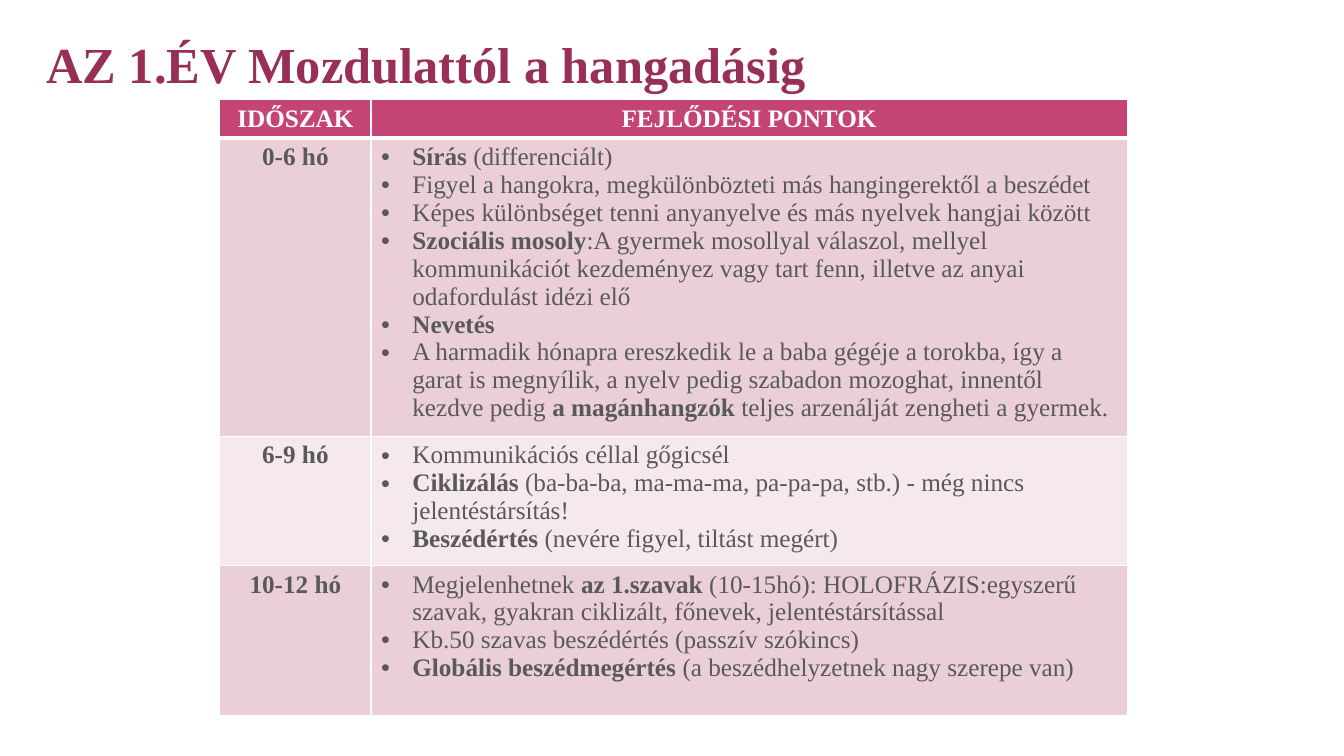
from dataclasses import dataclass

from lxml import etree
from pptx import Presentation
from pptx.dml.color import RGBColor
from pptx.enum.text import MSO_ANCHOR, MSO_AUTO_SIZE, PP_ALIGN
from pptx.oxml.ns import qn
from pptx.util import Pt

PX = 9144  # 100 px to the inch
FONT = "Times New Roman"
WINE = RGBColor(0x97, 0x2F, 0x57)
ROSE = RGBColor(0xC4, 0x44, 0x75)
PINK = RGBColor(0xEA, 0xCF, 0xD6)
PALE = RGBColor(0xF5, 0xE9, 0xEC)
GREY = RGBColor(0x59, 0x59, 0x59)
WHITE = RGBColor(0xFF, 0xFF, 0xFF)
LEFT, MID = PP_ALIGN.LEFT, PP_ALIGN.CENTER
BASE, FIXED = MSO_ANCHOR.BOTTOM, MSO_AUTO_SIZE.NONE
INDENT = 31
COLS = (150, 750)


@dataclass
class Row:
    """One table row; asterisks enclose bold words."""
    height: int
    fill: RGBColor
    span: str
    points: list[str]


ROWS = [
    Row(38, ROSE, "*IDŐSZAK*", ["*FEJLŐDÉSI PONTOK*"]),
    Row(296, PINK, "*0-6 hó*", [
        "*Sírás *(differenciált)",
        "Figyel a hangokra, megkülönbözteti más hangingerektől a beszédet",
        "Képes különbséget tenni anyanyelve és más nyelvek hangjai között",
        "*Szociális mosoly*:A gyermek mosollyal válaszol, mellyel "
        "kommunikációt kezdeményez vagy tart fenn, illetve az anyai "
        "odafordulást idézi elő",
        "*Nevetés*",
        "A harmadik hónapra ereszkedik le a baba gégéje a torokba, így a "
        "garat is megnyílik, a nyelv pedig szabadon mozoghat, innentől "
        "kezdve pedig *a magánhangzók *teljes arzenálját zengheti a gyermek.",
    ]),
    Row(128, PALE, "*6-9 hó*", [
        "Kommunikációs céllal gőgicsél",
        "*Ciklizálás* (ba-ba-ba, ma-ma-ma, pa-pa-pa, stb.) - még nincs "
        "jelentéstársítás!",
        "*Beszédértés* (nevére figyel, tiltást megért)",
    ]),
    Row(149, PINK, "*10-12 hó*", [
        "Megjelenhetnek *az 1.szavak *(10-15hó): HOLOFRÁZIS:egyszerű "
        "szavak, gyakran ciklizált, főnevek, jelentéstársítással",
        "Kb.50 szavas beszédértés (passzív szókincs)",
        "*Globális beszédmegértés *(a beszédhelyzetnek nagy szerepe van)",
    ]),
]


def write(frame, lines: list[str], *, size: int = 18, color: RGBColor = GREY,
          align=LEFT, dots: bool = False, pitch: float | None = None) -> None:
    for i, line in enumerate(lines):
        para = frame.add_paragraph() if i else frame.paragraphs[0]
        para.alignment = align
        if pitch:
            para.line_spacing = pitch
        if dots:
            props = para._p.get_or_add_pPr()
            props.set("marL", str(INDENT * PX))
            props.set("indent", str(-INDENT * PX))
            etree.SubElement(props, qn("a:buFont"), typeface="Arial")
            etree.SubElement(props, qn("a:buChar"), char="•")
        for j, part in enumerate(line.split("*")):
            if part:
                run = para.add_run()
                run.text = part
                font = run.font
                font.name, font.size, font.bold = FONT, Pt(size), j % 2 == 1
                font.color.rgb = color


def edge(cell, side: str, width: int) -> None:
    props = cell._tc.get_or_add_tcPr()
    line = etree.SubElement(props, qn(f"a:ln{side}"), w=str(Pt(width)))
    fill = etree.SubElement(line, qn("a:solidFill"))
    etree.SubElement(fill, qn("a:srgbClr"), val=str(WHITE))


def style(cell, fill: RGBColor, top: int, base: int) -> None:
    for side, width in zip("LRTB", (1, 1, top, base)):
        edge(cell, side, width)
    cell.fill.solid()
    cell.fill.fore_color.rgb = fill


def add_title(slide) -> None:
    title = slide.shapes.title
    title.left, title.top = 36 * PX, 14 * PX
    title.width, title.height = 900 * PX, 85 * PX
    frame = title.text_frame
    frame.auto_size, frame.word_wrap = FIXED, True
    frame.vertical_anchor = BASE
    write(frame, ["*AZ 1.ÉV Mozdulattól a hangadásig*"],
          size=36, color=WINE, pitch=0.9)


def add_grid(slide) -> None:
    high = sum(row.height for row in ROWS)
    grid = slide.shapes.add_table(len(ROWS), len(COLS), 218 * PX, 99 * PX,
                                  sum(COLS) * PX, high * PX).table
    for col, width in zip(grid.columns, COLS):
        col.width = width * PX
    for i, row in enumerate(ROWS):
        grid.rows[i].height = row.height * PX
        head = i == 0
        color = WHITE if head else GREY
        span, points = grid.cell(i, 0), grid.cell(i, 1)
        # A thick rule parts the header from the body
        for cell in (span, points):
            style(cell, row.fill, 3 if i == 1 else 1, 3 if head else 1)
        write(span.text_frame, [row.span], color=color, align=MID)
        write(points.text_frame, row.points, color=color,
              align=MID if head else LEFT, dots=not head)


def main() -> None:
    deck = Presentation()
    deck.slide_width, deck.slide_height = 1333 * PX, 750 * PX
    slide = deck.slides.add_slide(deck.slide_layouts[5])  # title only
    add_title(slide)
    add_grid(slide)
    deck.save("out.pptx")


if __name__ == "__main__":
    main()
